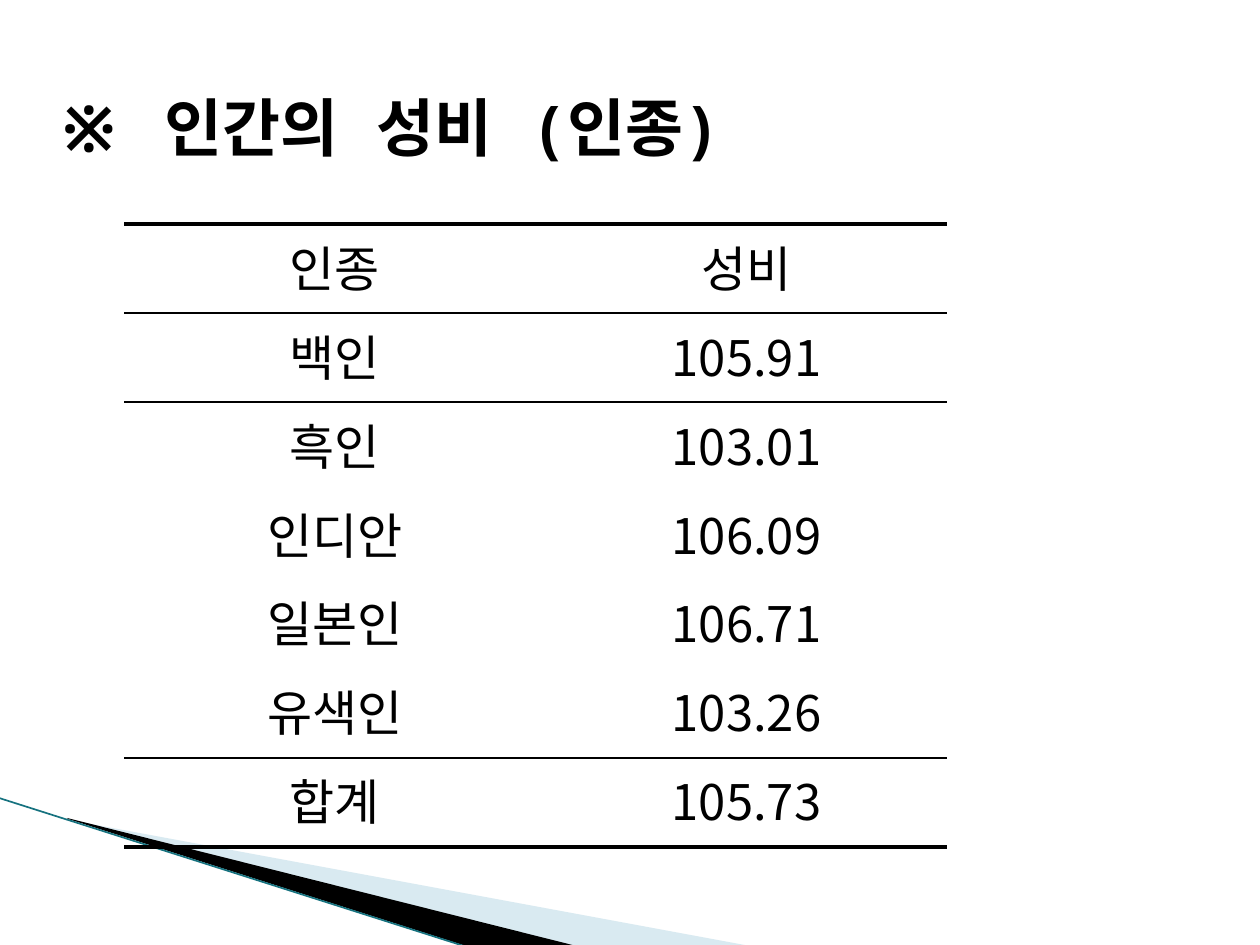
import dataclasses

import pptx
import pptx.dml.color
import pptx.enum.shapes
import pptx.enum.text
import pptx.oxml
import pptx.oxml.ns
import pptx.util

EMU_PER_PX = 914400 / 126
NO_GRID_STYLE = "{2D5ABB26-0587-4C30-8999-92F81FD0307C}"


@dataclasses.dataclass(frozen=True)
class Theme:
    ink: str = "000000"
    pale: str = "A0CBDC"
    pale_opacity: int = 40
    edge: str = "16727F"
    edge_width: float = 0.95
    title_font: str = "Noto Sans Mono"
    title_size: int = 36
    body_font: str = "Noto Sans CJK KR"
    body_size: int = 28
    thick_rule: float = 2.25
    thin_rule: float = 1


THEME = Theme()
SEX_RATIOS = [
    ("인종", "성비"),
    ("백인", "105.91"),
    ("흑인", "103.01"),
    ("인디안", "106.09"),
    ("일본인", "106.71"),
    ("유색인", "103.26"),
    ("합계", "105.73"),
]


def px(length):
    return pptx.util.Emu(round(length * EMU_PER_PX))


def rgb(code):
    return pptx.dml.color.RGBColor.from_string(code)


def add_child(parent, tag, **attributes):
    child = pptx.oxml.parse_xml(f"<a:{tag} {pptx.oxml.ns.nsdecls('a')}/>")
    for name, value in attributes.items():
        child.set(name, str(value))
    parent.append(child)
    return child


def write_text(para, text, family, size, bold=False):
    span = para.add_run()
    span.text = text
    font_format = {"name": family, "size": pptx.util.Pt(size), "bold": bold}
    for name, value in font_format.items():
        setattr(span.font, name, value)
    span.font.color.rgb = rgb(THEME.ink)
    add_child(span.font._element, "ea", typeface=family)


def add_wedge(page, points, color, opacity=100):
    builder = page.shapes.build_freeform(*points[0], scale=EMU_PER_PX)
    builder.add_line_segments(points[1:], close=True)
    wedge = builder.convert_to_shape()
    wedge.shadow.inherit = False
    wedge.fill.solid()
    wedge.fill.fore_color.rgb = rgb(color)
    wedge.line.fill.background()
    if opacity < 100:
        fill_color = wedge._element.spPr.find(".//" + pptx.oxml.ns.qn("a:srgbClr"))
        add_child(fill_color, "alpha", val=opacity * 1000)


def add_edge(page, start, end):
    edge = page.shapes.add_connector(
        pptx.enum.shapes.MSO_CONNECTOR.STRAIGHT, *map(px, start + end))
    edge.line.color.rgb = rgb(THEME.edge)
    edge.line.width = pptx.util.Pt(THEME.edge_width)
    add_child(edge._element.spPr, "effectLst")


def add_title(page, text, left, top, width, height):
    box = page.shapes.add_textbox(*map(px, (left, top, width, height)))
    frame_format = {
        "word_wrap": True,
        "vertical_anchor": pptx.enum.text.MSO_ANCHOR.MIDDLE,
    }
    for name, value in frame_format.items():
        setattr(box.text_frame, name, value)
    write_text(box.text_frame.paragraphs[0], text,
               THEME.title_font, THEME.title_size, True)


def add_rule(cell, side, width):
    rule = add_child(cell._tc.get_or_add_tcPr(), f"ln{side}",
                     w=pptx.util.Pt(width))
    add_child(add_child(rule, "solidFill"), "srgbClr", val=THEME.ink)


def add_ratio_table(page, rows, left, top, widths, row_height):
    frame = page.shapes.add_table(
        len(rows), len(widths), px(left), px(top),
        px(sum(widths)), px(row_height * len(rows)))
    table = frame.table
    table.first_row = table.horz_banding = False
    table._tbl.tblPr.find(pptx.oxml.ns.qn("a:tableStyleId")).text = NO_GRID_STYLE
    for column, width in zip(table.columns, widths):
        column.width = px(width)
    total = len(rows) - 1
    rules = {0: THEME.thick_rule, 1: THEME.thin_rule,
             total: THEME.thin_rule, total + 1: THEME.thick_rule}
    for row_index, values in enumerate(rows):
        table.rows[row_index].height = px(row_height)
        for column_index, value in enumerate(values):
            cell = table.cell(row_index, column_index)
            para = cell.text_frame.paragraphs[0]
            para.alignment = pptx.enum.text.PP_ALIGN.CENTER
            write_text(para, value, THEME.body_font, THEME.body_size)
            for side, boundary in (("T", row_index), ("B", row_index + 1)):
                if boundary in rules:
                    add_rule(cell, side, rules[boundary])
            cell.fill.background()


def main():
    deck = pptx.Presentation()
    deck.slide_width, deck.slide_height = px(1260), px(945)
    page = deck.slides.add_slide(deck.slide_layouts[6])
    add_wedge(page, [(69, 820), (750, 946), (575, 946), (69, 819)],
              THEME.pale, THEME.pale_opacity)
    add_wedge(page, [(67, 818), (576, 946), (469, 947), (68, 819)], THEME.ink)
    add_edge(page, (-1, 798), (467, 947))
    add_title(page, "※ 인간의 성비 (인종)", 39, 76, 730, 100)
    add_ratio_table(page, SEX_RATIOS, 124, 224, (422, 401), 89)
    deck.save("out.pptx")


if __name__ == "__main__":
    main()
